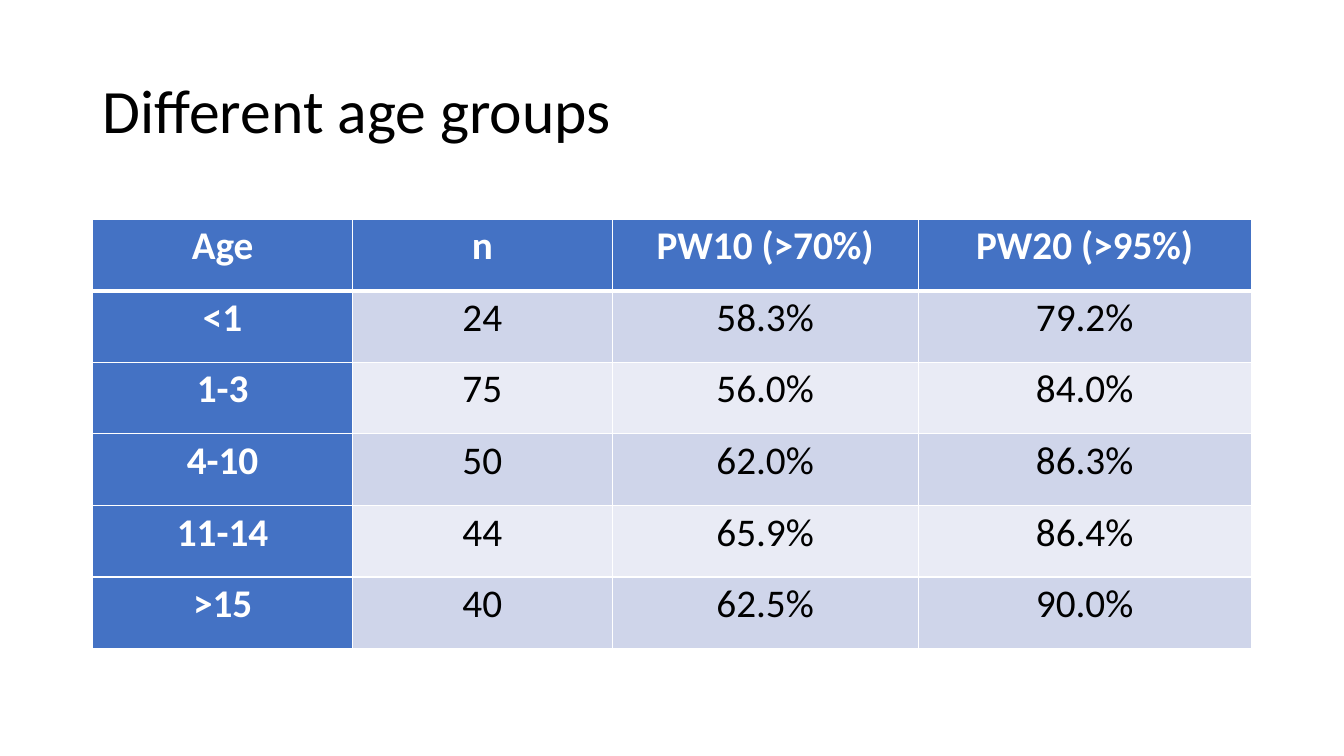
from lxml.etree import SubElement
from pptx import Presentation
from pptx.dml.color import RGBColor
from pptx.enum.text import MSO_ANCHOR, MSO_AUTO_SIZE, PP_ALIGN
from pptx.oxml.ns import qn
from pptx.util import Inches, Pt

BLACK = RGBColor(0x00, 0x00, 0x00)
WHITE = RGBColor(0xFF, 0xFF, 0xFF)
BLUE = RGBColor(0x44, 0x72, 0xC4)
BAND_DARK = RGBColor(0xCF, 0xD5, 0xEA)
BAND_LIGHT = RGBColor(0xE9, 0xEB, 0xF5)

SLIDE_W, SLIDE_H = 13.33, 7.5
MARGIN_X, MARGIN_TOP = 0.92, 0.4
GRID_COLS = 12
COL = (SLIDE_W - 2 * MARGIN_X) / GRID_COLS
ROW = 0.71

AGE_GROUPS = [
    ["Age", "n", "PW10 (>70%)", "PW20 (>95%)"],
    ["<1", "24", "58.3%", "79.2%"],
    ["1-3", "75", "56.0%", "84.0%"],
    ["4-10", "50", "62.0%", "86.3%"],
    ["11-14", "44", "65.9%", "86.4%"],
    [">15", "40", "62.5%", "90.0%"],
]


class SlideBuilder:
    """Places elements on a grid of COL by ROW inside the margins."""

    font = "Calibri"
    title_size = Pt(44)
    cell_size = Pt(28)

    def __init__(self, slide):
        self.slide = slide

    def box(self, row, rows):
        return (Inches(MARGIN_X), Inches(MARGIN_TOP + row * ROW),
                Inches(GRID_COLS * COL), Inches(rows * ROW))

    def style(self, p, size, color, align, spacing, bold=False):
        p.alignment = align
        p.line_spacing = spacing
        p.font.name = self.font
        p.font.size = size
        p.font.bold = bold
        p.font.color.rgb = color

    def title(self, text, row, rows):
        sp = self.slide.shapes.title
        sp.left, sp.top, sp.width, sp.height = self.box(row, rows)
        tf = sp.text_frame
        tf.text = text
        tf.auto_size = MSO_AUTO_SIZE.NONE
        tf.vertical_anchor = MSO_ANCHOR.MIDDLE
        self.style(tf.paragraphs[0], self.title_size, BLACK, PP_ALIGN.LEFT, 0.9)

    def table(self, data, row, col_spans):
        """Add a table whose column widths are given in grid columns."""
        frame = self.slide.shapes.add_table(
            len(data), len(col_spans), *self.box(row, len(data)))
        table = frame.table
        table.first_col = True
        for column, span in zip(table.columns, col_spans):
            column.width = Inches(span * COL)
        for i, values in enumerate(data):
            for j, value in enumerate(values):
                self.cell(table.cell(i, j), value, i, j)

    def cell(self, cell, text, i, j):
        heading = i == 0 or j == 0
        cell.margin_left = cell.margin_right = Inches(0.07)
        cell.margin_top = cell.margin_bottom = 0
        self.borders(cell, top=3 if i == 1 else 1, bottom=3 if i == 0 else 1)
        cell.fill.solid()
        band = BAND_DARK if i % 2 else BAND_LIGHT
        cell.fill.fore_color.rgb = BLUE if heading else band
        cell.text = text
        self.style(cell.text_frame.paragraphs[0], self.cell_size,
                   WHITE if heading else BLACK, PP_ALIGN.CENTER, 1.07, heading)

    def borders(self, cell, top, bottom):
        """Draw white cell borders; must run before the cell is filled."""
        tcPr = cell._tc.get_or_add_tcPr()
        for side, width in (("L", 1), ("R", 1), ("T", top), ("B", bottom)):
            ln = SubElement(tcPr, qn(f"a:ln{side}"), w=str(Pt(width)))
            fill = SubElement(ln, qn("a:solidFill"))
            SubElement(fill, qn("a:srgbClr"), val=str(WHITE))


def main():
    prs = Presentation()
    prs.slide_width, prs.slide_height = Inches(SLIDE_W), Inches(SLIDE_H)
    title_only = prs.slide_layouts[5]
    builder = SlideBuilder(prs.slides.add_slide(title_only))
    builder.title("Different age groups", row=0, rows=2.04)
    builder.table(AGE_GROUPS, row=2.5, col_spans=[2.69, 2.69, 3.17, 3.45])
    prs.save("out.pptx")


if __name__ == "__main__":
    main()
